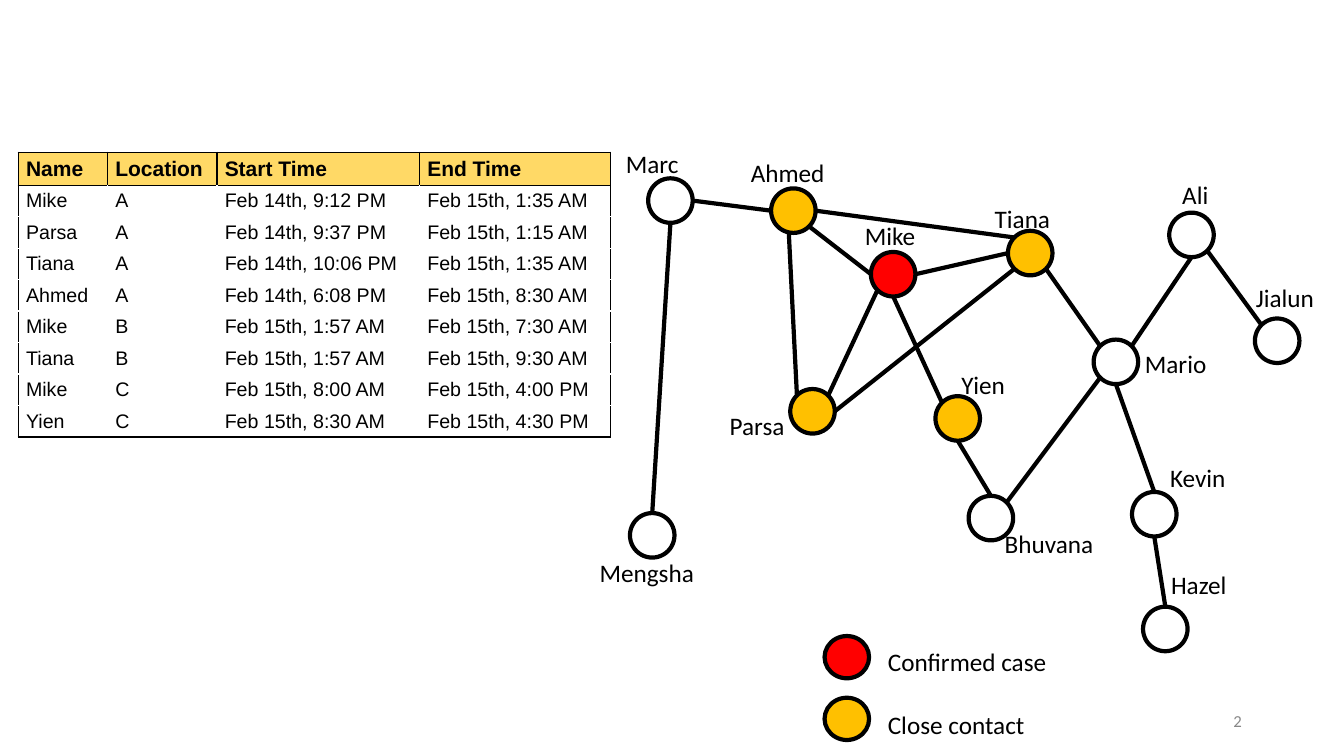
from dataclasses import dataclass

from lxml.etree import SubElement
from pptx import Presentation
from pptx.dml.color import RGBColor
from pptx.enum.shapes import MSO_CONNECTOR, MSO_SHAPE
from pptx.enum.text import MSO_ANCHOR, PP_ALIGN
from pptx.oxml.ns import qn
from pptx.util import Pt


@dataclass(frozen=True)
class Theme:
    black: str = "000000"
    white: str = "FFFFFF"
    confirmed: str = "FF0000"
    contact: str = "FFC000"
    header: str = "FFD966"
    muted: str = "888888"
    label_font: str = "Calibri"
    table_font: str = "Arial"
    label_size: float = 18
    header_size: float = 15
    cell_size: float = 14
    number_size: float = 12
    stroke: float = 3
    border: float = 1
    node: float = 31.8


T = Theme()

# Connection sites of an ellipse: index, then fractions of width and height
SITES = {
    "top": (0, 0.5, 0), "top left": (1, 0.15, 0.15),
    "left": (2, 0, 0.5), "bottom left": (3, 0.15, 0.85),
    "bottom": (4, 0.5, 1), "bottom right": (5, 0.85, 0.85),
    "right": (6, 1, 0.5), "top right": (7, 0.85, 0.15),
    "lower edge": (None, 0.39, 0.84),
}

# Name: (node left, top), (label left, top, width), fill
PEOPLE = {
    "Marc": ((463, 127.4), (439.9, 102.2, 54), None),
    "Mario": ((781.2, 242.6), (810.7, 245.5, 60), None),
    "Mengsha": ((450, 366.5), (421.2, 394.6, 86), None),
    "Bhuvana": ((691.9, 354.2), (710.6, 373.7, 92), None),
    "Kevin": ((808.6, 351.4), (828.7, 326.9, 58), None),
    "Hazel": ((816.5, 433.4), (829.4, 403.2, 60), T.white),
    "Ali": ((835.2, 151.9), (837.4, 124.6, 36), None),
    "Jialun": ((896.4, 227.5), (889.9, 198, 60), None),
    "Mike": ((622.1, 180), (610.6, 154.1, 59), T.confirmed),
    "Ahmed": ((550.8, 134.6), (529.2, 108.7, 70), T.contact),
    "Tiana": ((720, 164.9), (703.4, 141.8, 78.5), T.contact),
    "Parsa": ((564.5, 277.9), (514.1, 289.4, 59), T.contact),
    "Yien": ((668.2, 283), (679.7, 259.9, 50), T.contact),
}

CONTACTS = [
    ("Marc", "right", "Ahmed", "left"),
    ("Marc", "bottom", "Mengsha", "top"),
    ("Tiana", "bottom right", "Mario", "top left"),
    ("Ali", "bottom right", "Jialun", "top left"),
    ("Kevin", "bottom", "Hazel", "top"),
    ("Yien", "bottom", "Bhuvana", "top"),
    ("Bhuvana", "top right", "Mario", "bottom left"),
    ("Mario", "top right", "Ali", "bottom"),
    ("Kevin", "top", "Mario", "bottom"),
    ("Mike", "left", "Ahmed", "bottom right"),
    ("Mike", "bottom", "Yien", "top left"),
    ("Parsa", "top right", "Mike", "bottom left"),
    ("Parsa", "top left", "Ahmed", "lower edge"),
    ("Tiana", "left", "Mike", "right"),
    ("Tiana", "top left", "Ahmed", "right"),
    ("Parsa", "right", "Tiana", "bottom left"),
]

LEGEND = [
    ("Confirmed case", T.confirmed, 454.3, 457.9, 132),
    ("Close contact", T.contact, 498.4, 503.3, 116),
]

VISITS = [
    ("Name", "Location", "Start Time", "End Time"),
    ("Mike", "A", "Feb 14th, 9:12 PM", "Feb 15th, 1:35 AM"),
    ("Parsa", "A", "Feb 14th, 9:37 PM", "Feb 15th, 1:15 AM"),
    ("Tiana", "A", "Feb 14th, 10:06 PM", "Feb 15th, 1:35 AM"),
    ("Ahmed", "A", "Feb 14th, 6:08 PM", "Feb 15th, 8:30 AM"),
    ("Mike", "B", "Feb 15th, 1:57 AM", "Feb 15th, 7:30 AM"),
    ("Tiana", "B", "Feb 15th, 1:57 AM", "Feb 15th, 9:30 AM"),
    ("Mike", "C", "Feb 15th, 8:00 AM", "Feb 15th, 4:00 PM"),
    ("Yien", "C", "Feb 15th, 8:30 AM", "Feb 15th, 4:30 PM"),
]


def write(tf, text, *, size, font, color=T.black, bold=False, align=PP_ALIGN.LEFT):
    p = tf.paragraphs[0]
    p.alignment = align
    r = p.add_run()
    r.text = text
    r.font.size, r.font.name, r.font.bold = Pt(size), font, bold
    r.font.color.rgb = RGBColor.from_string(color)


class Builder:
    def __init__(self, slide, theme):
        self.s, self.t = slide, theme

    def text(self, text, x, y, w, h=29, anchor=MSO_ANCHOR.TOP, **fmt):
        tf = self.s.shapes.add_textbox(Pt(x), Pt(y), Pt(w), Pt(h)).text_frame
        tf.word_wrap, tf.vertical_anchor = True, anchor
        write(tf, text, **{"size": self.t.label_size, "font": self.t.label_font, **fmt})

    def node(self, x, y, fill=None, h=None):
        d = self.t.node
        sp = self.s.shapes.add_shape(MSO_SHAPE.OVAL, Pt(x), Pt(y), Pt(d), Pt(h or d))
        sp.shadow.inherit = False
        if fill:
            sp.fill.solid()
            sp.fill.fore_color.rgb = RGBColor.from_string(fill)
        else:
            sp.fill.background()
        sp.line.color.rgb = RGBColor.from_string(self.t.black)
        sp.line.width = Pt(self.t.stroke)
        return sp

    def link(self, a, a_site, b, b_site):
        ends = [(sp, *SITES[site]) for sp, site in ((a, a_site), (b, b_site))]
        points = [int(v) for sp, _, fx, fy in ends
                  for v in (sp.left + fx * sp.width, sp.top + fy * sp.height)]
        cxn = self.s.shapes.add_connector(MSO_CONNECTOR.STRAIGHT, *points)
        cxn.line.color.rgb = RGBColor.from_string(self.t.black)
        cxn.line.width = Pt(self.t.stroke)
        el = cxn.element
        SubElement(el.find(qn("p:spPr")), qn("a:effectLst"))
        # Glue the ends to the round nodes, whose sites number eight
        props = el.find(".//" + qn("p:cNvCxnSpPr"))
        for tag, (sp, idx, _, _) in zip(("a:stCxn", "a:endCxn"), ends):
            if idx is not None:
                SubElement(props, qn(tag), id=str(sp.shape_id), idx=str(idx))
        # Send the line behind the nodes
        el.getparent().insert(2, el)

    def border(self, cell, side, color):
        ln = SubElement(cell._tc.get_or_add_tcPr(), qn("a:ln" + side),
                        w=str(Pt(self.t.border)))
        fill = SubElement(ln, qn("a:solidFill"))
        SubElement(fill, qn("a:srgbClr"), val=color)

    def table(self, rows, x, y, widths, heights):
        t = self.t
        tbl = self.s.shapes.add_table(len(rows), len(widths), Pt(x), Pt(y),
                                      Pt(sum(widths)), Pt(sum(heights))).table
        tbl.first_row = tbl.horz_banding = False
        for col, w in zip(tbl.columns, widths):
            col.width = Pt(w)
        for row, h in zip(tbl.rows, heights):
            row.height = Pt(h)
        for i, row in enumerate(rows):
            head = i == 0
            for j, text in enumerate(row):
                cell = tbl.cell(i, j)
                cell.margin_left = Pt(5.6)
                cell.margin_right = cell.margin_top = cell.margin_bottom = Pt(2.8)
                cell.vertical_anchor = MSO_ANCHOR.MIDDLE
                write(cell.text_frame, text, font=t.table_font, bold=head,
                      size=t.header_size if head else t.cell_size)
                # Black around the header cells and the body's outline
                outer = {"L": j == 0, "R": j == len(row) - 1,
                         "T": i == 1, "B": i == len(rows) - 1}
                for side, on_edge in outer.items():
                    self.border(cell, side, t.black if head or on_edge else t.white)
                if head:
                    cell.fill.solid()
                    cell.fill.fore_color.rgb = RGBColor.from_string(t.header)
                else:
                    cell.fill.background()


def main():
    prs = Presentation()
    prs.slide_width, prs.slide_height = Pt(960), Pt(540)
    b = Builder(prs.slides.add_slide(prs.slide_layouts[6]), T)

    # Contact network
    nodes = {name: b.node(*at, fill) for name, (at, _, fill) in PEOPLE.items()}
    for start, start_site, end, end_site in CONTACTS:
        b.link(nodes[start], start_site, nodes[end], end_site)
    for name, (_, label, _) in PEOPLE.items():
        b.text(name, *label)

    # Legend
    for text, fill, node_y, text_y, w in LEGEND:
        b.node(589, node_y, fill, h=30.2)
        b.text(text, 627.1, text_y, w)

    # Visit log
    b.table(VISITS, 13, 108.7, [63.8, 78.2, 144.7, 136.4],
            [23.4] + [22.5] * (len(VISITS) - 1))

    # Slide number
    b.text("2", 678.2, 500.5, 216, anchor=MSO_ANCHOR.MIDDLE, size=T.number_size,
           color=T.muted, align=PP_ALIGN.RIGHT)
    prs.save("out.pptx")


if __name__ == "__main__":
    main()
